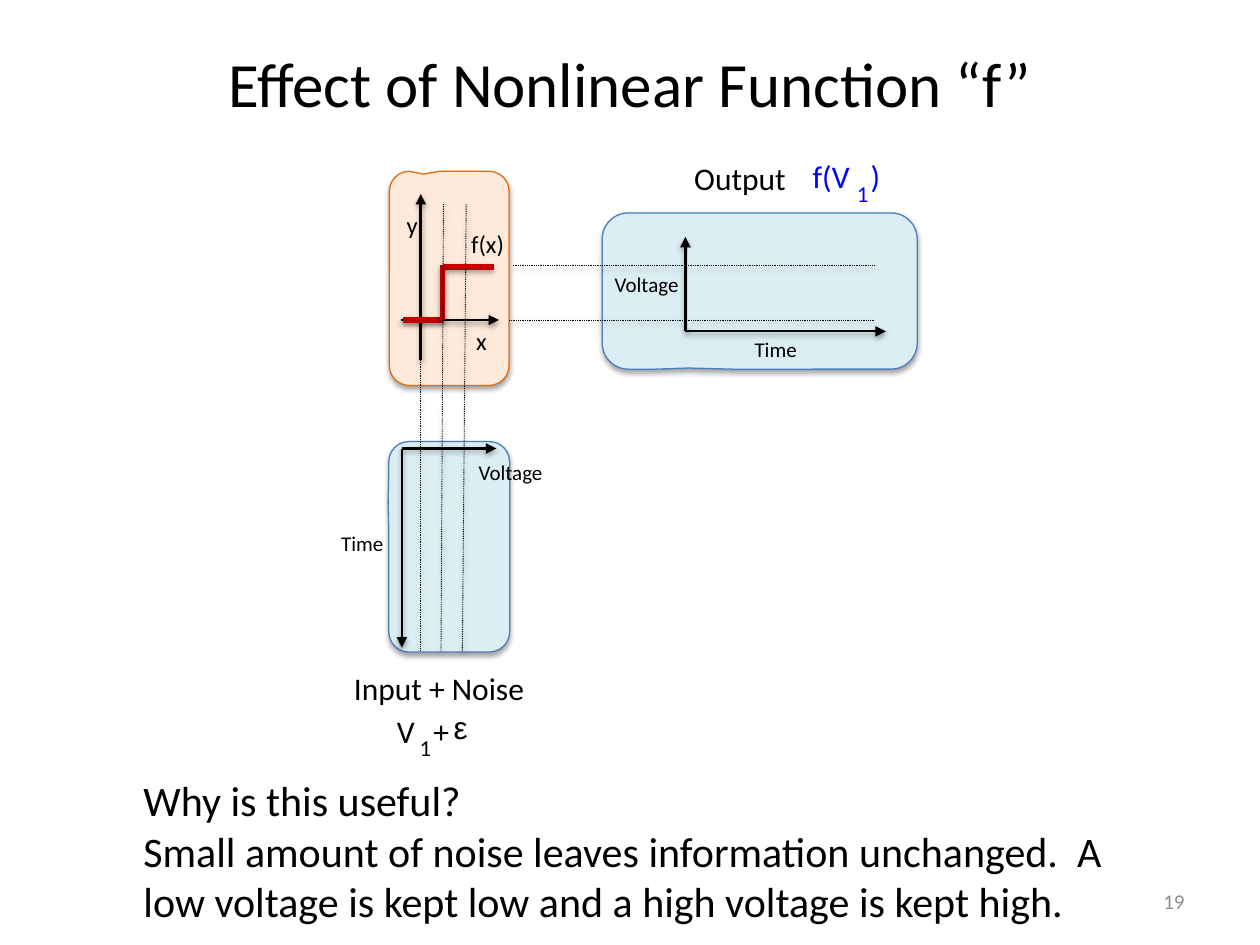
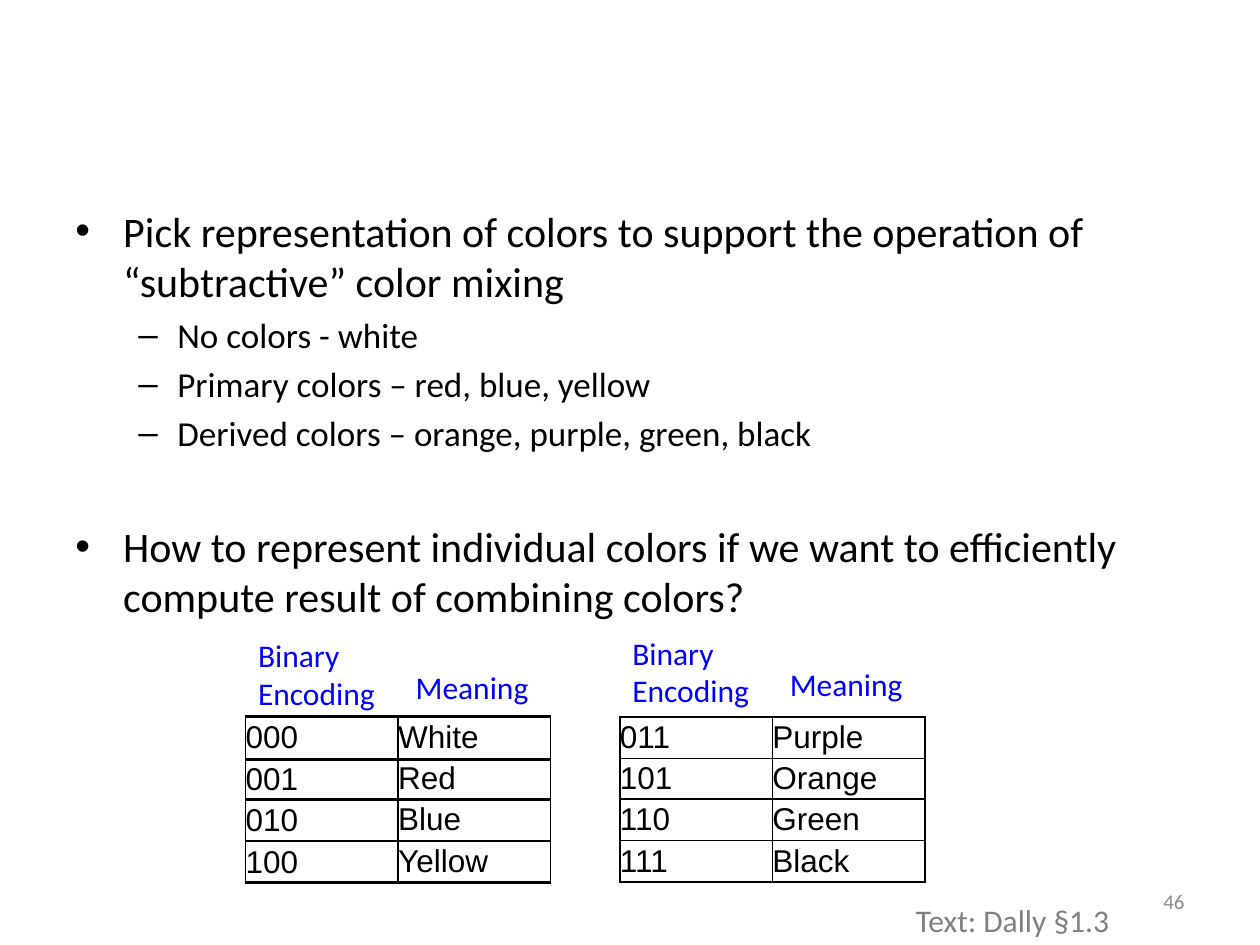
"""Two lecture slides: a nonlinear transfer function and a binary colour encoding."""
from lxml.etree import SubElement
from pptx import Presentation
from pptx.dml.color import RGBColor
from pptx.enum.dml import MSO_LINE
from pptx.enum.shapes import MSO_CONNECTOR, MSO_SHAPE
from pptx.enum.text import MSO_ANCHOR, PP_ALIGN
from pptx.oxml.ns import qn
from pptx.util import Inches, Pt

COLORS = {
    "ink": "000000",
    "label": "0000FF",
    "number": "8C8C8C",
    "reference": "808080",
    "signal": "DBEEF4",
    "signal_edge": "4B7EBC",
    "plot": "DCEFF5",
    "function": "FDEADA",
    "function_edge": "E46C0A",
    "curve": "C00000",
}


def rgb(name):
    return RGBColor.from_string(COLORS[name])


def write(paragraph, text, size=18, color="ink", font="Calibri",
          align=PP_ALIGN.LEFT, before=0, bullet=None, left=0, hanging=0):
    if bullet:
        props = paragraph._p.get_or_add_pPr()
        props.set("marL", str(Inches(left)))
        props.set("indent", str(-Inches(hanging)))
        SubElement(props, qn("a:buFont"), typeface="Arial")
        SubElement(props, qn("a:buChar"), char=bullet)
    paragraph.alignment = align
    if before:
        paragraph.space_before = Pt(before)
    run = paragraph.add_run()
    run.text = text
    run.font.size = Pt(size)
    run.font.name = font
    run.font.color.rgb = rgb(color)


class Deck:
    def __init__(self):
        self.prs = Presentation()
        self.prs.slide_width, self.prs.slide_height = Inches(10), Inches(7.5)
        self.slide = None

    def new_slide(self, number):
        self.slide = self.prs.slides.add_slide(self.prs.slide_layouts[6])
        self.text(str(number), 7.17, 6.95, 2.33, 0.4, anchor=MSO_ANCHOR.MIDDLE,
                  size=12, color="number", align=PP_ALIGN.RIGHT)

    def title(self, text):
        self.text(text, 0.5, 0.03, 9, 1.25, anchor=MSO_ANCHOR.MIDDLE,
                  size=36, align=PP_ALIGN.CENTER)

    def frame(self, x, y, w, h, anchor=MSO_ANCHOR.TOP, wrap=True, tight=False):
        frame = self.slide.shapes.add_textbox(
            Inches(x), Inches(y), Inches(w), Inches(h)).text_frame
        frame.word_wrap = wrap
        frame.vertical_anchor = anchor
        if tight:
            frame.margin_left = frame.margin_right = 0
            frame.margin_top = frame.margin_bottom = 0
        return frame

    def text(self, text, x, y, w, h, anchor=MSO_ANCHOR.TOP, wrap=True,
             tight=False, **style):
        frame = self.frame(x, y, w, h, anchor, wrap, tight)
        for i, line in enumerate(text.split("\n")):
            write(frame.add_paragraph() if i else frame.paragraphs[0], line, **style)

    def bullets(self, items, x, y, w, h):
        frame = self.frame(x, y, w, h)
        for i, (text, style) in enumerate(items):
            write(frame.add_paragraph() if i else frame.paragraphs[0], text, **style)

    def shadow(self, effects, distance, opacity):
        outer = SubElement(effects, qn("a:outerShdw"), blurRad=str(Pt(3.1)),
                           dist=str(Pt(distance)), dir="5400000", rotWithShape="0")
        shade = SubElement(outer, qn("a:srgbClr"), val=COLORS["ink"])
        SubElement(shade, qn("a:alpha"), val=str(opacity * 1000))

    def block(self, preset, x, y, w, h, fill):
        block = self.slide.shapes.add_shape(
            preset, Inches(x), Inches(y), Inches(w), Inches(h))
        block.fill.solid()
        block.fill.fore_color.rgb = rgb(fill)
        block.line.fill.background()
        block.shadow.inherit = False
        return block

    def panel(self, x, y, w, h, adjustments, kind="signal", rotation=0):
        panel = self.block(MSO_SHAPE.ROUNDED_RECTANGULAR_CALLOUT, x, y, w, h, kind)
        for i, value in enumerate(adjustments):
            panel.adjustments[i] = value
        panel.rotation = rotation
        panel.line.color.rgb = rgb(kind + "_edge")
        panel.line.width = Pt(0.75)
        self.shadow(panel._element.spPr.find(qn("a:effectLst")), 1.8, 35)

    def line(self, x1, y1, x2, y2, width, color="ink", dotted=False, arrow=False):
        line = self.slide.shapes.add_connector(
            MSO_CONNECTOR.STRAIGHT, Inches(x1), Inches(y1), Inches(x2), Inches(y2))
        line.line.color.rgb = rgb(color)
        line.line.width = Pt(width)
        if dotted:
            line.line.dash_style = MSO_LINE.ROUND_DOT
        if arrow:
            SubElement(line.line._get_or_add_ln(), qn("a:tailEnd"), type="triangle")
        self.shadow(SubElement(line._element.spPr, qn("a:effectLst")), 1.6, 38)

    def axes(self, x, y, across, along):
        self.line(x, y, across, y, 1.25, arrow=True)
        self.line(x, y, x, along, 1.25, arrow=True)

    def border(self, cell):
        props = cell._tc.get_or_add_tcPr()
        for i, side in enumerate(("lnL", "lnR", "lnT", "lnB")):
            edge = props.makeelement(qn("a:" + side), {"w": str(Pt(1))})
            fill = SubElement(edge, qn("a:solidFill"))
            SubElement(fill, qn("a:srgbClr"), val=COLORS["ink"])
            props.insert(i, edge)

    def table(self, rows, x, y, col_width, row_heights):
        table = self.slide.shapes.add_table(
            len(rows), len(rows[0]), Inches(x), Inches(y),
            Inches(col_width * len(rows[0])), Inches(sum(row_heights))).table
        table.first_row = table.horz_banding = False
        for column in table.columns:
            column.width = Inches(col_width)
        for r, row in enumerate(rows):
            table.rows[r].height = Inches(row_heights[r])
            for c, value in enumerate(row):
                cell = table.cell(r, c)
                cell.fill.background()
                cell.vertical_anchor = MSO_ANCHOR.MIDDLE
                cell.margin_left = cell.margin_right = 0
                cell.margin_top = cell.margin_bottom = 0
                if value:
                    write(cell.text_frame.paragraphs[0], value, font="Arial")
                self.border(cell)


def nonlinear_function(deck):
    deck.new_slide(19)
    deck.title("Effect of Nonlinear Function “f”")

    deck.panel(2.73, 3.86, 1.67, 0.96, (-0.214, 0.505, 0.167), rotation=90)
    deck.panel(3.09, 1.36, 0.95, 1.7, (-0.214, -0.487, 0.167), kind="function")
    deck.panel(4.78, 1.69, 2.5, 1.24, (-0.226, 0.493, 0.167))

    deck.line(3.18, 2.54, 3.96, 2.54, 1.5, arrow=True)
    deck.line(3.34, 2.86, 3.34, 1.54, 1.5, arrow=True)
    for step in ((3.2, 2.54, 3.52, 2.54), (3.52, 2.12, 3.92, 2.12),
                 (3.51, 2.54, 3.51, 2.1)):
        deck.line(*step, 3, color="curve")
    deck.axes(5.44, 2.63, 7.03, 1.88)

    for plot_area in ((3.18, 3.57, 0.76, 1.51), (5.46, 1.97, 1.45, 0.63)):
        deck.block(MSO_SHAPE.RECTANGLE, *plot_area, "plot")
    for guide in ((3.34, 2.86, 3.34, 5.17), (3.52, 1.62, 3.5, 5.17),
                  (3.7, 1.62, 3.67, 5.17), (4.04, 2.54, 6.94, 2.54),
                  (4.07, 2.11, 6.94, 2.11)):
        deck.line(*guide, 0.5, dotted=True)
    deck.axes(3.19, 3.56, 3.94, 5.14)

    for name, x, y, w in (("x", 3.68, 2.54, 0.37), ("y", 3.13, 1.62, 0.37),
                          ("f(x)", 3.64, 1.77, 0.51)):
        deck.text(name, x, y, w, 0.34, size=14)
    for name, x, y in (("Time", 5.89, 2.62), ("Voltage", 4.78, 2.11),
                       ("Time", 2.61, 4.16), ("Voltage", 3.7, 3.6)):
        deck.text(name, x, y, 0.86, 0.3, size=12)

    for part, x, y, w, style in (
            ("Output", 5.51, 1.26, 0.83, {}),
            ("f(V", 6.45, 1.25, 0.3, {"color": "label"}),
            ("1", 6.8, 1.43, 0.09, {"color": "label", "size": 13}),
            (")", 6.91, 1.25, 0.08, {"color": "label"}),
            ("Input + Noise", 2.81, 5.31, 1.37, {}),
            ("V", 3.15, 5.65, 0.19, {}),
            ("1", 3.33, 5.82, 0.1, {"size": 13}),
            ("+", 3.44, 5.65, 0.16, {}),
            ("ε", 3.6, 5.62, 0.12, {"font": "Arial"})):
        deck.text(part, x, y, w, 0.3, wrap=False, tight=True, **style)

    deck.text("Why is this useful?\nSmall amount of noise leaves information unchanged.  "
              "A low voltage is kept low and a high voltage is kept high.",
              1.04, 6.1, 8.33, 1.35, size=24)


def color_encoding(deck):
    deck.new_slide(46)
    point = {"size": 24, "bullet": "•", "left": 0.38, "hanging": 0.38}
    detail = {"size": 20, "bullet": "–", "left": 0.81, "hanging": 0.31, "before": 4}
    deck.bullets((
        ("Pick representation of colors to support the operation of "
         "“subtractive” color mixing", point),
        ("No colors - white", detail),
        ("Primary colors – red, blue, yellow", detail),
        ("Derived colors – orange, purple, green, black", detail),
        ("How to represent individual colors if we want to efficiently "
         "compute result of combining colors?", {**point, "before": 38.5}),
    ), 0.5, 1.58, 9, 3.51)

    basic_x, mixed_x = 1.95, 4.92
    basic_rows, mixed_rows = (0.34, 0.32, 0.33, 0.33), (0.33, 0.32, 0.33, 0.33)
    for x, y, heights, codes, meanings in (
            (basic_x, 5.68, basic_rows, ("000", "", "", ""),
             ("White", "Red", "Blue", "Yellow")),
            (mixed_x, 5.69, mixed_rows, [""] * 4,
             ("Purple", "Orange", "Green", "Black")),
            (basic_x, 5.69, basic_rows, ("", "001", "010", "100"), [""] * 4),
            (mixed_x, 5.69, mixed_rows, ("011", "", "", ""), [""] * 4),
            (mixed_x, 5.69, mixed_rows, ("", "101", "110", "111"), [""] * 4)):
        deck.table(list(zip(codes, meanings)), x, y, 1.21, heights)

    for x, y in ((basic_x, 5), (mixed_x, 4.98)):
        deck.text("Binary\nEncoding", x, y, 1.14, 0.71, wrap=False, color="label")
        deck.text("Meaning", x + 1.25, y + 0.25, 1.11, 0.4, wrap=False, color="label")

    deck.text("Text: Dally §1.3", 7.17, 7.1, 1.92, 0.4, color="reference")


def main():
    deck = Deck()
    nonlinear_function(deck)
    color_encoding(deck)
    deck.prs.save("out.pptx")


if __name__ == "__main__":
    main()
